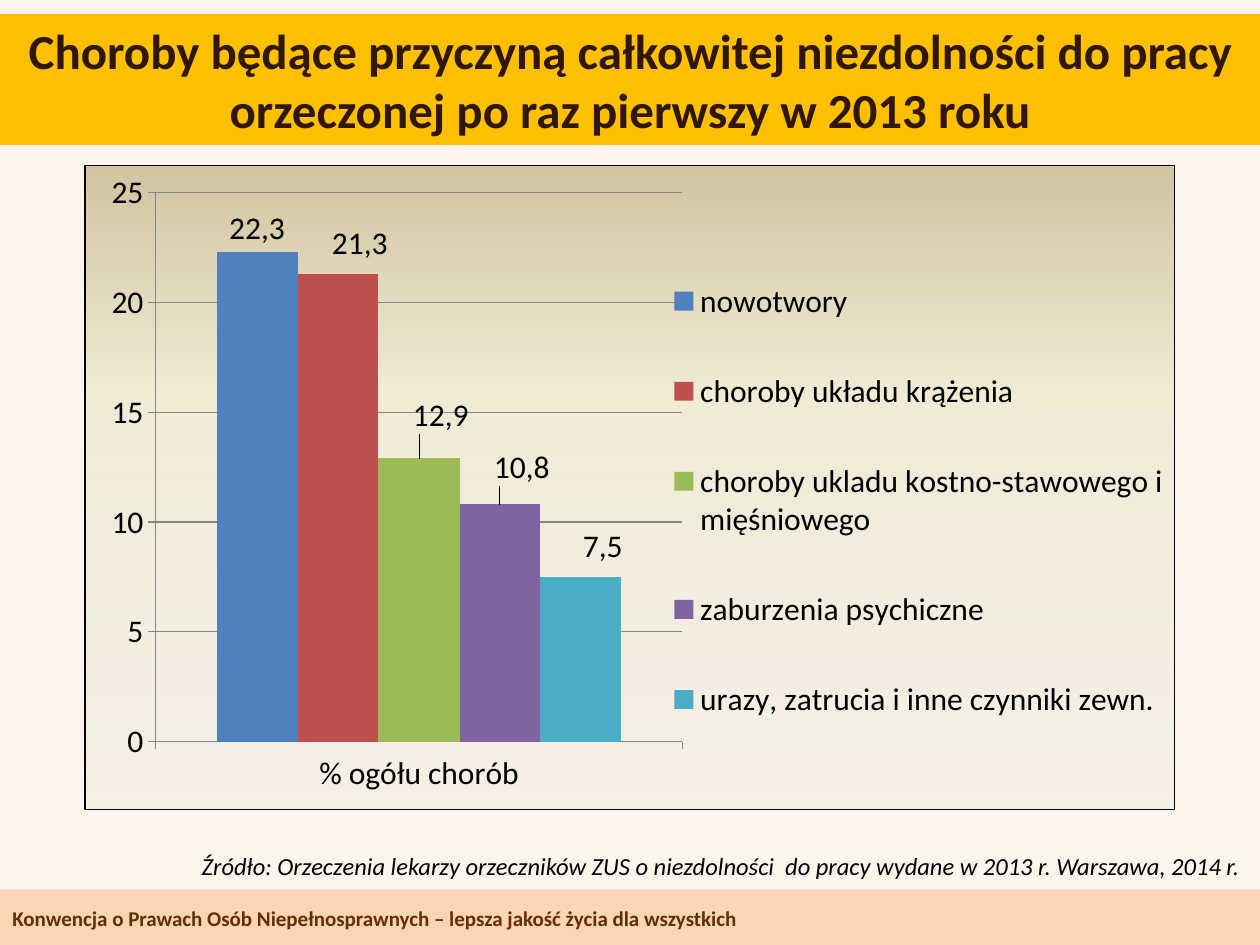
import dataclasses

import pptx
import pptx.chart.data
import pptx.dml.color
import pptx.enum.chart
import pptx.enum.shapes
import pptx.enum.text
import pptx.oxml
import pptx.oxml.ns
import pptx.util

Pt = pptx.util.Pt
ALIGN = pptx.enum.text.PP_ALIGN
ANCHOR = pptx.enum.text.MSO_ANCHOR

DISEASES = [
    ("nowotwory", 22.3, "4F81BD", (0, 0)),
    ("choroby układu krążenia", 21.3, "C0504D", (0.02, -0.01)),
    ("choroby ukladu kostno-stawowego i mięśniowego", 12.9, "9BBB59", (0.02, -0.03)),
    ("zaburzenia psychiczne", 10.8, "8064A2", (0.02, -0.02)),
    ("urazy, zatrucia i inne czynniki zewn.", 7.5, "4BACC6", (0.02, -0.01)),
]


@dataclasses.dataclass(frozen=True)
class Theme:
    font: str = "Calibri"
    background: str = "FDF4EB"
    banner: str = "FFC000"
    banner_text: str = "301702"
    footer: str = "FCD5B5"
    footer_text: str = "642F04"
    ink: str = "000000"
    axis: str = "868686"
    gradient: tuple = ((0, "EEECE1", 47), (65, "F0EBD5", 100), (100, "D1C39F", 100))
    title_size: int = 28
    chart_size: int = 18
    source_size: int = 14
    footer_size: int = 12


def rgb(value):
    return pptx.dml.color.RGBColor.from_string(value)


def manual_layout(**values):
    ns = pptx.oxml.ns.nsdecls("c")
    parts = "".join(f'<c:{key} val="{value}"/>' for key, value in values.items())
    return pptx.oxml.parse_xml(
        f"<c:layout {ns}><c:manualLayout>{parts}</c:manualLayout></c:layout>")


def set_layout(element, predecessor, **values):
    for old in element.findall(pptx.oxml.ns.qn("c:layout")):
        element.remove(old)
    layout = manual_layout(**values)
    if predecessor is None:
        element.insert(0, layout)
    else:
        element.find(pptx.oxml.ns.qn(predecessor)).addnext(layout)


class SlideBuilder:
    """Draws themed elements on one slide."""

    def __init__(self, slide, theme):
        self.slide = slide
        self.theme = theme
        fill = slide.background.fill
        fill.solid()
        fill.fore_color.rgb = rgb(theme.background)

    def bar(self, left, top, width, height, color):
        bar = self.slide.shapes.add_shape(
            pptx.enum.shapes.MSO_SHAPE.RECTANGLE, Pt(left), Pt(top), Pt(width), Pt(height))
        bar.shadow.inherit = False
        bar.fill.solid()
        bar.fill.fore_color.rgb = rgb(color)
        bar.line.fill.background()
        return bar

    def text(self, left, top, width, height, wording, size, color, **style):
        box = self.slide.shapes.add_textbox(Pt(left), Pt(top), Pt(width), Pt(height))
        self.put_wording(box, wording, size, color, **style)
        return box

    def put_wording(self, holder, wording, size, color,
                    align=ALIGN.LEFT, bold=False, italic=False):
        frame = holder.text_frame
        frame.word_wrap = True
        frame.vertical_anchor = ANCHOR.MIDDLE
        frame.text = wording
        paragraph = frame.paragraphs[0]
        paragraph.alignment = align
        for run in paragraph.runs:
            self.style_font(run.font, size, color)
            run.font.bold = bold
            run.font.italic = italic

    def style_font(self, font, size, color):
        font.name = self.theme.font
        font.size = Pt(size)
        font.color.rgb = rgb(color)

    def column_chart(self, left, top, width, height, category, rows):
        data = pptx.chart.data.CategoryChartData(number_format="0.0")
        data.categories = [category]
        for name, value, _, _ in rows:
            data.add_series(name, [value])
        chart = self.slide.shapes.add_chart(
            pptx.enum.chart.XL_CHART_TYPE.COLUMN_CLUSTERED,
            Pt(left), Pt(top), Pt(width), Pt(height), data).chart
        self.style_font(chart.font, self.theme.chart_size, self.theme.ink)
        chart.has_title = False
        plot = chart.plots[0]
        plot.gap_width = 150
        plot.overlap = 0
        plot.vary_by_categories = False
        for series, row in zip(plot.series, rows):
            self.column(series, *row[1:])
        self.axes(chart)
        self.legend(chart)
        set_layout(chart._chartSpace.chart.plotArea, None, layoutTarget="inner",
                   xMode="edge", yMode="edge", x=0.065, y=0.042, w=0.483, h=0.853)
        self.chart_frame(chart)

    def column(self, series, value, color, offset):
        series.format.fill.solid()
        series.format.fill.fore_color.rgb = rgb(color)
        label = series.points[0].data_label
        label.text_frame.text = f"{value:.1f}".replace(".", ",")
        run = label.text_frame.paragraphs[0].runs[0]
        self.style_font(run.font, self.theme.chart_size, self.theme.ink)
        label.position = pptx.enum.chart.XL_LABEL_POSITION.OUTSIDE_END
        if any(offset):
            tag = series._element.find(".//" + pptx.oxml.ns.qn("c:dLbl"))
            set_layout(tag, "c:idx", x=offset[0], y=offset[1])

    def axes(self, chart):
        scale = chart.value_axis
        scale.minimum_scale, scale.maximum_scale, scale.major_unit = 0, 25, 5
        scale.has_major_gridlines = True
        scale.tick_labels.number_format = "0"
        scale.tick_labels.number_format_is_linked = False
        for axis in (scale, chart.category_axis):
            axis.major_tick_mark = pptx.enum.chart.XL_TICK_MARK.OUTSIDE
        for part in (scale, chart.category_axis, scale.major_gridlines):
            part.format.line.color.rgb = rgb(self.theme.axis)
            part.format.line.width = Pt(0.75)

    def legend(self, chart):
        chart.has_legend = True
        legend = chart.legend
        legend.position = pptx.enum.chart.XL_LEGEND_POSITION.RIGHT
        legend.include_in_layout = False
        self.style_font(legend.font, self.theme.chart_size, self.theme.ink)
        set_layout(legend._element, "c:legendPos", xMode="edge", yMode="edge",
                   x=0.53, y=0.1, w=0.47, h=0.84)

    def chart_frame(self, chart):
        stops = "".join(
            f'<a:gs pos="{pos * 1000}"><a:srgbClr val="{color}">'
            f'<a:alpha val="{alpha * 1000}"/></a:srgbClr></a:gs>'
            for pos, color, alpha in self.theme.gradient)
        frame = pptx.oxml.parse_xml(
            f'<c:spPr {pptx.oxml.ns.nsdecls("c", "a")}><a:gradFill><a:gsLst>{stops}</a:gsLst>'
            f'<a:lin ang="16200000" scaled="0"/></a:gradFill><a:ln w="{Pt(0.75)}"><a:solidFill>'
            f'<a:srgbClr val="{self.theme.ink}"/></a:solidFill></a:ln></c:spPr>')
        chart._chartSpace.chart.addnext(frame)


def main():
    deck = pptx.Presentation()
    deck.slide_width, deck.slide_height = Pt(720), Pt(540)
    theme = Theme()
    builder = SlideBuilder(deck.slides.add_slide(deck.slide_layouts[6]), theme)

    builder.bar(0, 508.3, 720, 31.7, theme.footer)
    builder.text(0, 513.4, 720, 22.3,
                 "Konwencja o Prawach Osób Niepełnosprawnych – lepsza jakość życia dla wszystkich",
                 theme.footer_size, theme.footer_text, bold=True)
    banner = builder.bar(0, 7.9, 720, 74.9, theme.banner)
    builder.put_wording(banner, "Choroby będące przyczyną całkowitej niezdolności do pracy "
                        "orzeczonej po raz pierwszy w 2013 roku",
                        theme.title_size, theme.banner_text, align=ALIGN.CENTER, bold=True)
    builder.column_chart(48.2, 94.3, 623.5, 368.5, "% ogółu chorób", DISEASES)
    source = builder.text(105.1, 482.4, 614.9, 24.5,
                          "Źródło: Orzeczenia lekarzy orzeczników ZUS o niezdolności  do pracy "
                          "wydane w 2013 r. Warszawa, 2014 r.",
                          theme.source_size, theme.ink, align=ALIGN.RIGHT, italic=True)
    source.text_frame.margin_right = Pt(11)
    deck.save("out.pptx")


if __name__ == "__main__":
    main()
